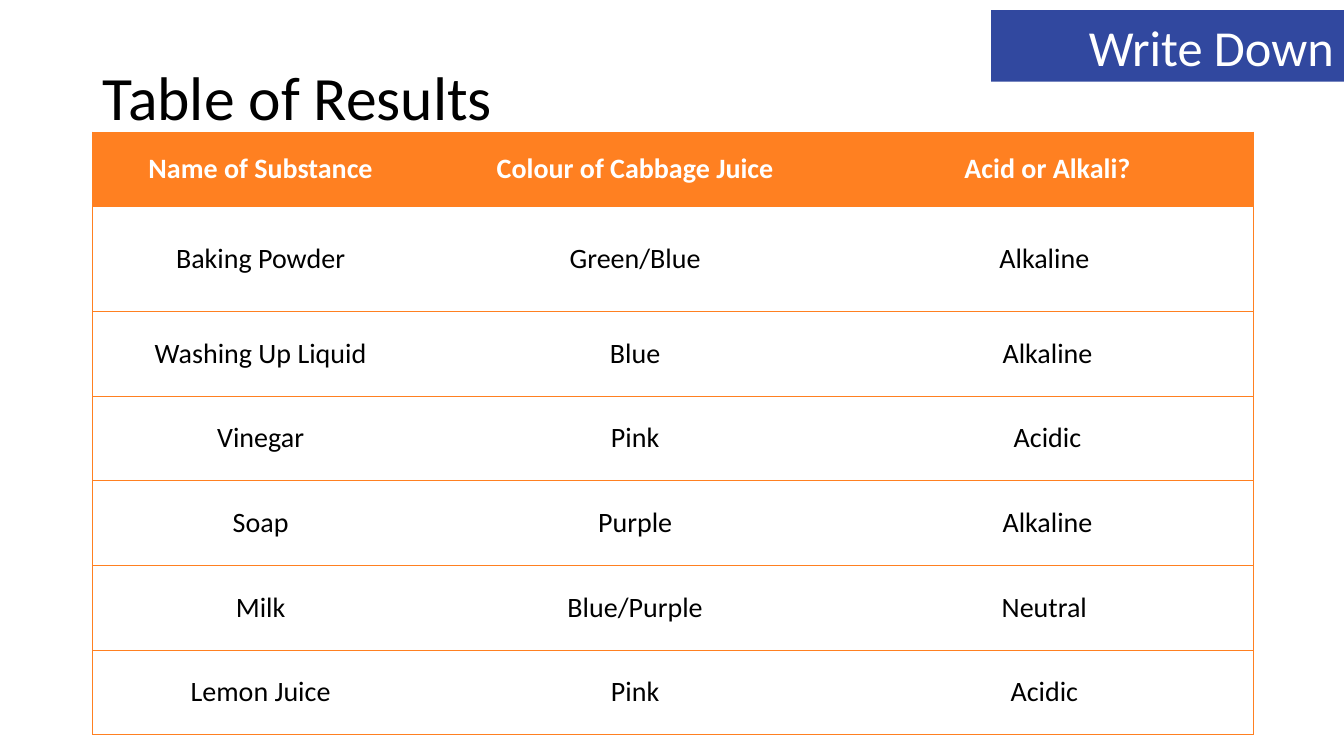
import pptx
import pptx.dml.color
import pptx.enum.shapes
import pptx.enum.text
import pptx.oxml.ns
import pptx.util
from lxml import etree

RGBColor = pptx.dml.color.RGBColor
ORANGE = RGBColor(0xFF, 0x80, 0x21)
BLUE = RGBColor(0x31, 0x48, 0x9F)
WHITE = RGBColor(0xFF, 0xFF, 0xFF)
BLACK = RGBColor(0, 0, 0)

ALIGN = pptx.enum.text.PP_ALIGN
MIDDLE = pptx.enum.text.MSO_ANCHOR.MIDDLE
WIDTH, HEIGHT = 13.33, 7.5

RESULTS = [
    ("Name of Substance", "Colour of Cabbage Juice", "Acid or Alkali?"),
    ("Baking Powder", "Green/Blue", "Alkaline "),
    ("Washing Up Liquid", "Blue", "Alkaline"),
    ("Vinegar", "Pink", "Acidic"),
    ("Soap", "Purple", "Alkaline"),
    ("Milk", "Blue/Purple", "Neutral "),
    ("Lemon Juice", "Pink", "Acidic "),
]
COLUMN_WIDTHS = [3.33, 4.1, 4.08]
ROW_HEIGHTS = [0.74, 1.04] + [0.84] * 5


class SlideBuilder:
    def __init__(self, prs, font_name):
        self.prs = prs
        self.font_name = font_name
        self.slide = prs.slides.add_slide(prs.slide_layouts[5])

    def box(self, x, y, w, h):
        """Turn shares of the slide's size into lengths."""
        sw, sh = self.prs.slide_width, self.prs.slide_height
        return [pptx.util.Emu(round(v)) for v in (x * sw, y * sh, w * sw, h * sh)]

    def put_text(self, tf, text, size, color, align, bold=False):
        p = tf.paragraphs[0]
        p.alignment = align
        r = p.add_run()
        r.text = text
        style = {"name": self.font_name, "size": pptx.util.Pt(size), "bold": bold}
        for key, value in style.items():
            setattr(r.font, key, value)
        r.font.color.rgb = color
        return p

    def title(self, text, box):
        sp = self.slide.shapes.title
        for key, value in zip(("left", "top", "width", "height"), self.box(*box)):
            setattr(sp, key, value)
        sp.text_frame.vertical_anchor = MIDDLE
        p = self.put_text(sp.text_frame, text, 44, BLACK, ALIGN.LEFT)
        p.line_spacing = 0.9

    def banner(self, text, box):
        sp = self.slide.shapes.add_shape(
            pptx.enum.shapes.MSO_SHAPE.RECTANGLE, *self.box(*box))
        sp.shadow.inherit = False
        sp.fill.solid()
        sp.fill.fore_color.rgb = BLUE
        sp.line.fill.background()
        sp.text_frame.vertical_anchor = MIDDLE
        self.put_text(sp.text_frame, text, 36, WHITE, ALIGN.RIGHT)

    def border(self, cell, sides):
        """Draw orange lines on the given sides and clear the others."""
        tc_pr = cell._tc.get_or_add_tcPr()
        qn = pptx.oxml.ns.qn
        for i, side in enumerate("LRTB"):
            ln = etree.Element(qn(f"a:ln{side}"), w=str(pptx.util.Pt(0.5)))
            if side in sides:
                fill = etree.SubElement(ln, qn("a:solidFill"))
                etree.SubElement(fill, qn("a:srgbClr"), val=str(ORANGE))
            else:
                etree.SubElement(ln, qn("a:noFill"))
            tc_pr.insert(i, ln)

    def table(self, rows, widths, heights, box):
        tbl = self.slide.shapes.add_table(
            len(rows), len(widths), *self.box(*box)).table
        tbl.horz_banding = False
        for column, width in zip(tbl.columns, widths):
            column.width = pptx.util.Inches(width)
        for row, height in zip(tbl.rows, heights):
            row.height = pptx.util.Inches(height)
        edges = {0: "L", len(widths) - 1: "R"}
        for i, row in enumerate(rows):
            header = i == 0
            for j, text in enumerate(row):
                cell = tbl.cell(i, j)
                if header:
                    cell.fill.solid()
                    cell.fill.fore_color.rgb = ORANGE
                else:
                    cell.fill.background()
                cell.vertical_anchor = MIDDLE
                self.put_text(cell.text_frame, text, 20,
                              WHITE if header else BLACK, ALIGN.CENTER, header)
                self.border(cell, "TB" + edges.get(j, ""))


def main():
    prs = pptx.Presentation()
    prs.slide_width = pptx.util.Inches(WIDTH)
    prs.slide_height = pptx.util.Inches(HEIGHT)
    s = SlideBuilder(prs, "Calibri")
    left, width = 0.92 / WIDTH, 11.5 / WIDTH
    s.title("Table of Results", (left, 0.27 / HEIGHT, width, 1.45 / HEIGHT))
    s.table(RESULTS, COLUMN_WIDTHS, ROW_HEIGHTS,
            (left, 1.31 / HEIGHT, width, sum(ROW_HEIGHTS) / HEIGHT))
    s.banner("Write Down", (1 - 3.5 / WIDTH, 0.1 / HEIGHT, 3.5 / WIDTH, 0.71 / HEIGHT))
    prs.save("out.pptx")


if __name__ == "__main__":
    main()
